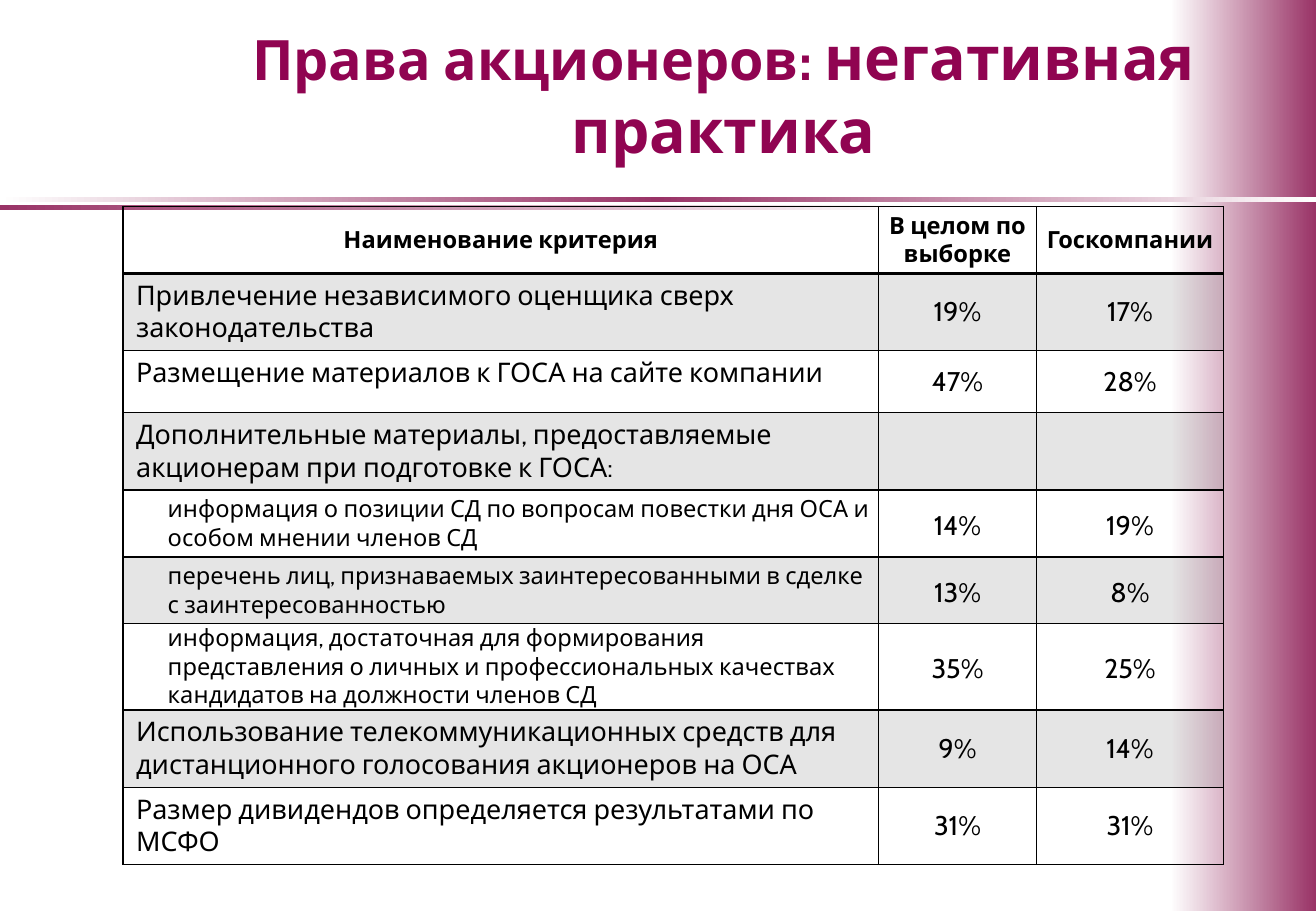
from dataclasses import dataclass

from lxml.etree import SubElement
from pptx import Presentation
from pptx.dml.color import RGBColor
from pptx.enum.shapes import MSO_SHAPE
from pptx.enum.text import MSO_ANCHOR as Anchor, MSO_AUTO_SIZE, PP_ALIGN as Align
from pptx.oxml.ns import qn
from pptx.util import Inches, Pt

WIDTH, HEIGHT = 10.83, 7.5
FONT = "Cabin"
BLACK, WHITE, PLUM, TITLE_COLOR, BAND = "000000", "FFFFFF", "993366", "900451", "808080"


@dataclass(frozen=True)
class Bar:
    """A gradient strip; lengths are percent of the slide."""
    left: float
    top: float
    width: float
    height: float
    colors: tuple[str, ...]


@dataclass(frozen=True)
class CellStyle:
    size: int
    side: float
    edge: float = 0
    bold: bool = False
    align: Align = Align.CENTER
    anchor: Anchor = Anchor.MIDDLE
    after: int = 3
    spacing: float | None = None
    indent: float = 0


@dataclass(frozen=True)
class Row:
    height: float
    texts: tuple[str, str, str]
    name_style: CellStyle
    value_style: CellStyle


HEADER = CellStyle(14, 0.08, bold=True)
CRITERION = CellStyle(16, 0.11, 0.05, align=Align.LEFT, anchor=Anchor.TOP, after=12)
DETAIL = CellStyle(14, 0.02, align=Align.LEFT, indent=0.35)
SHARE = CellStyle(16, 0.08)
DETAIL_SHARE = CellStyle(16, 0.07, spacing=1.15)

BARS = [
    Bar(88.92, 0, 11.08, 100, (WHITE, PLUM)),
    Bar(0, 21.6, 100, 0.53, (WHITE, PLUM, WHITE)),
    Bar(0, 22.53, 70, 0.53, (PLUM, WHITE)),
]
COLUMNS = (57.43, 12, 14.22)
ROWS = [
    Row(7.33, ("Наименование критерия", "В целом по выборке", "Госкомпании"), HEADER, HEADER),
    Row(7.87, ("Привлечение независимого оценщика сверх законодательства", "19%", "17%"),
        CRITERION, SHARE),
    Row(6.8, ("Размещение материалов к ГОСА на сайте компании", "47%", "28%"), CRITERION, SHARE),
    Row(7.33, ("Дополнительные материалы, предоставляемые акционерам при подготовке к ГОСА:", "", ""),
        CRITERION, SHARE),
    Row(7.33, ("информация о позиции СД по вопросам повестки дня ОСА и особом мнении членов СД",
               "14%", "19%"), DETAIL, DETAIL_SHARE),
    Row(7.33, ("перечень лиц, признаваемых заинтересованными в сделке с заинтересованностью",
               "13%", "8%"), DETAIL, DETAIL_SHARE),
    Row(7.33, ("информация, достаточная для формирования представления о личных и "
               "профессиональных качествах кандидатов на должности членов СД",
               "35%", "25%"), DETAIL, DETAIL_SHARE),
    Row(7.33, ("Использование телекоммуникационных средств для дистанционного голосования "
               "акционеров на ОСА", "9%", "14%"), CRITERION, SHARE),
    Row(5.2, ("Размер дивидендов определяется результатами по МСФО", "31%", "31%"),
        CRITERION, SHARE),
]


def across(percent: float) -> int:
    return Inches(WIDTH * percent / 100)


def down(percent: float) -> int:
    return Inches(HEIGHT * percent / 100)


def rgb(color: str) -> RGBColor:
    return RGBColor.from_string(color)


def add_run(paragraph, text: str, size: int, color: str, bold: bool) -> None:
    run = paragraph.add_run()
    run.text = text
    run.font.name, run.font.size, run.font.bold = FONT, Pt(size), bold
    run.font.color.rgb = rgb(color)


def set_insets(target, side: float, edge: float) -> None:
    target.margin_left = target.margin_right = Inches(side)
    target.margin_top = target.margin_bottom = Inches(edge)


def add_bar(slide, bar: Bar) -> None:
    strip = slide.shapes.add_shape(MSO_SHAPE.RECTANGLE, across(bar.left), down(bar.top),
                                   across(bar.width), down(bar.height))
    strip.shadow.inherit = False
    strip.line.fill.background()
    strip.fill.gradient()
    strip.fill.gradient_angle = 0
    stops = strip._element.spPr.find(".//" + qn("a:gsLst"))
    for stop in list(stops):
        stops.remove(stop)
    for i, color in enumerate(bar.colors):
        stop = SubElement(stops, qn("a:gs"), pos=str(100000 * i // (len(bar.colors) - 1)))
        SubElement(stop, qn("a:srgbClr"), val=color)


def fill_title(slide) -> None:
    title = slide.shapes.title
    title.left, title.top = across(12.19), 0
    title.width, title.height = across(85.6), down(20.4)
    frame = title.text_frame
    frame.word_wrap = True
    frame.auto_size = MSO_AUTO_SIZE.NONE
    frame.vertical_anchor = Anchor.MIDDLE
    set_insets(frame, 0.12, 0.06)
    heading = frame.paragraphs[0]
    heading.alignment = Align.CENTER
    add_run(heading, "Права акционеров: ", 33, TITLE_COLOR, True)
    add_run(heading, "негативная практика", 36, TITLE_COLOR, True)
    # Bring the title in front of the bars
    slide.shapes._spTree.append(title._element)


def add_borders(cell, top: int, bottom: int) -> None:
    properties = cell._tc.get_or_add_tcPr()
    for side, points in (("L", 1), ("R", 1), ("T", top), ("B", bottom)):
        border = SubElement(properties, qn(f"a:ln{side}"), w=str(Pt(points)))
        SubElement(SubElement(border, qn("a:solidFill")), qn("a:srgbClr"), val=BLACK)


def shade(cell, banded: bool) -> None:
    if not banded:
        cell.fill.background()
        return
    cell.fill.solid()
    cell.fill.fore_color.rgb = rgb(BAND)
    color = cell._tc.tcPr.find(qn("a:solidFill")).find(qn("a:srgbClr"))
    SubElement(color, qn("a:alpha"), val="20000")


def fill_cell(cell, text: str, style: CellStyle) -> None:
    set_insets(cell, style.side, style.edge)
    cell.vertical_anchor = style.anchor
    paragraph = cell.text_frame.paragraphs[0]
    paragraph.alignment = style.align
    paragraph.space_after = Pt(style.after)
    if style.spacing:
        paragraph.line_spacing = style.spacing
    if style.indent:
        paragraph._p.get_or_add_pPr().set("marL", str(Inches(style.indent)))
    if text:
        add_run(paragraph, text, style.size, BLACK, style.bold)


def add_criteria(slide) -> None:
    holder = slide.shapes.add_table(len(ROWS), len(COLUMNS), across(9.33), down(22.67),
                                    across(sum(COLUMNS)), down(68.8))
    criteria = holder.table
    criteria.first_row = criteria.horz_banding = False
    for column, width in zip(criteria.columns, COLUMNS):
        column.width = across(width)
    for r, row in enumerate(ROWS):
        criteria.rows[r].height = down(row.height)
        for c, text in enumerate(row.texts):
            cell = criteria.cell(r, c)
            fill_cell(cell, text, row.value_style if c else row.name_style)
            add_borders(cell, top=2 if r == 1 else 1, bottom=2 if r == 0 else 1)
            shade(cell, banded=r % 2 == 1)
    holder.height = down(68.8)


def main() -> None:
    deck = Presentation()
    deck.slide_width, deck.slide_height = Inches(WIDTH), Inches(HEIGHT)
    slide = deck.slides.add_slide(deck.slide_layouts[5])
    # Background bars
    for bar in BARS:
        add_bar(slide, bar)
    # Title and table
    fill_title(slide)
    add_criteria(slide)
    deck.save("out.pptx")


if __name__ == "__main__":
    main()
